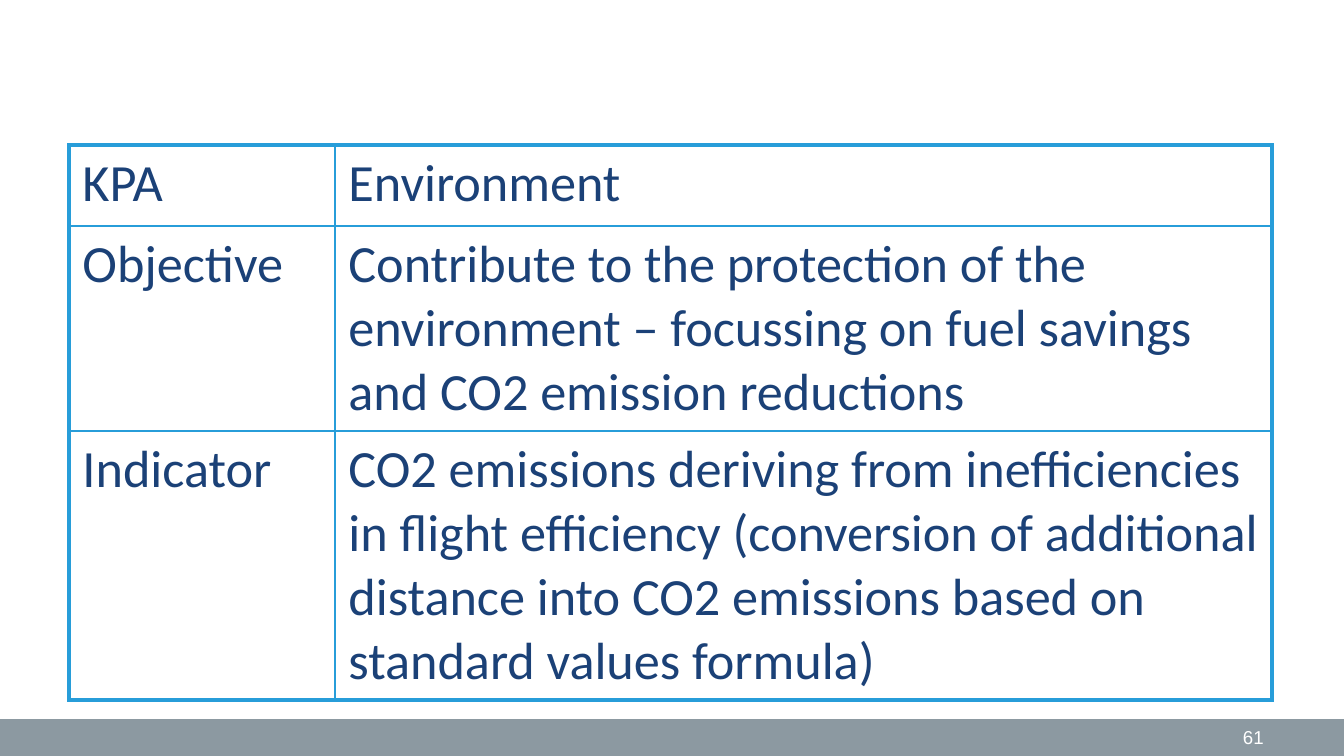
from lxml.etree import SubElement as Sub
from pptx import Presentation
from pptx.dml.color import RGBColor as Rgb
from pptx.enum.shapes import MSO_SHAPE as Shape
from pptx.enum.text import MSO_ANCHOR as Anchor, PP_ALIGN as Align
from pptx.oxml.ns import qn
from pptx.util import Pt

HEX = {"text": "1B4177", "line": "279DD9", "bar": "8C99A1", "white": "FFFFFF"}
ROWS = [
    ("KPA", "Environment"),
    ("Objective", "Contribute to the protection of the environment – focussing "
     "on fuel savings and CO2 emission reductions"),
    ("Indicator", "CO2 emissions deriving from inefficiencies in flight "
     "efficiency (conversion of additional distance into CO2 emissions "
     "based on standard values formula)"),
]
COLS = [142.5, 502]
HIGHS = [43.2, 109.6, 144]
THICK, THIN = 2.25, 1


def color(name):
    return Rgb.from_string(HEX[name])


def style(para, font, size, tone):
    para.font.name = font
    para.font.size = Pt(size)
    para.font.color.rgb = color(tone)


def border(cell, sides):
    """Draw the cell's edges; they must come before its fill."""
    props = cell._tc.get_or_add_tcPr()
    for i, (side, wide) in enumerate(sides.items()):
        line = Sub(props, qn("a:ln" + side), w=str(Pt(wide)))
        fill = Sub(line, qn("a:solidFill"))
        Sub(fill, qn("a:srgbClr"), val=HEX["line"])
        props.insert(i, line)


def add_grid(slide, left, top):
    frame = slide.shapes.add_table(len(ROWS), len(COLS), Pt(left), Pt(top),
                                   Pt(sum(COLS)), Pt(sum(HIGHS)))
    table = frame.table
    table.first_row = table.horz_banding = False
    for col, wide in zip(table.columns, COLS):
        col.width = Pt(wide)
    for row, high in zip(table.rows, HIGHS):
        row.height = Pt(high)

    last_r, last_c = len(ROWS) - 1, len(COLS) - 1
    for r, words in enumerate(ROWS):
        for c, text in enumerate(words):
            cell = table.cell(r, c)
            cell.text = text
            style(cell.text_frame.paragraphs[0], "Calibri", 28, "text")
            cell.fill.background()
            # Outer edges are thick, inner ones thin
            border(cell, {"L": THICK if c == 0 else THIN,
                          "R": THICK if c == last_c else THIN,
                          "T": THICK if r == 0 else THIN,
                          "B": THICK if r == last_r else THIN})


def add_bar(slide, top, wide, high):
    bar = slide.shapes.add_shape(Shape.RECTANGLE, 0, Pt(top), Pt(wide), Pt(high))
    bar.shadow.inherit = False
    bar.fill.solid()
    bar.fill.fore_color.rgb = color("bar")
    bar.line.fill.background()


def add_num(slide, text, left, top, wide, high):
    box = slide.shapes.add_textbox(Pt(left), Pt(top), Pt(wide), Pt(high))
    frame = box.text_frame
    frame.word_wrap = True
    frame.vertical_anchor = Anchor.MIDDLE
    frame.text = text
    para = frame.paragraphs[0]
    para.alignment = Align.RIGHT
    style(para, "Arial", 10, "white")


def main():
    deck = Presentation()
    deck.slide_width, deck.slide_height = Pt(720), Pt(405)
    slide = deck.slides.add_slide(deck.slide_layouts[6])

    # Footer bar
    add_bar(slide, 385.2, 720, 19.8)
    # Indicator table
    add_grid(slide, 37, 77.8)
    # Page number
    add_num(slide, "61", 516, 385.2, 168, 19.8)

    deck.save("out.pptx")


if __name__ == "__main__":
    main()
